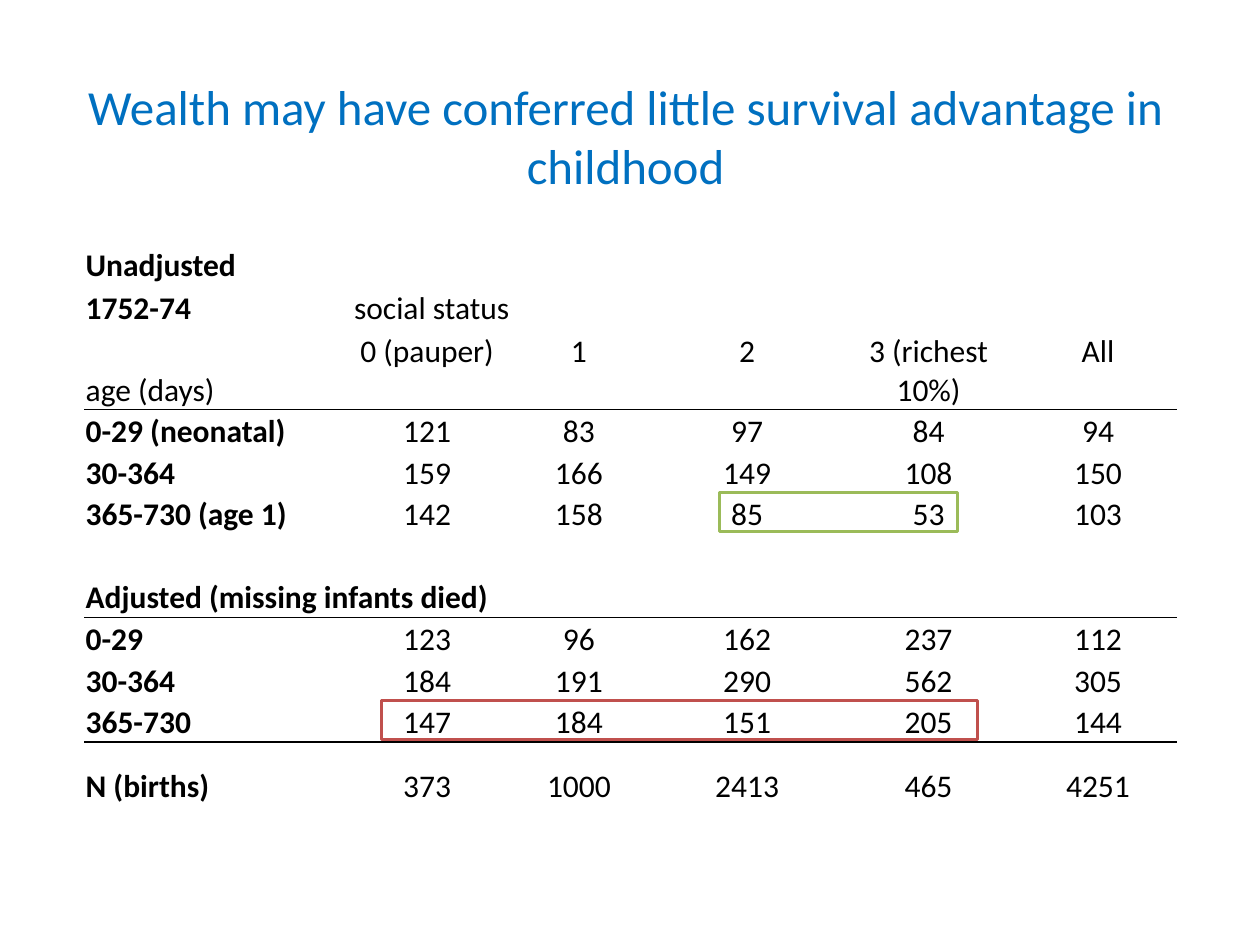
from dataclasses import dataclass

from lxml import etree
from pptx import Presentation
from pptx import util as u
from pptx.dml import color
from pptx.enum import shapes, text
from pptx.oxml import ns


@dataclass(frozen=True)
class Theme:
    font: str = "Calibri"
    title_size: int = 28
    body_size: int = 18
    title: str = "0070C0"
    ink: str = "000000"
    paper: str = "FFFFFF"
    unadjusted: str = "9BBB59"
    adjusted: str = "C0504D"
    outline: float = 2
    header_rule: float = 1
    section_rule: float = 0.75
    no_table_style: str = "{2D5ABB26-0587-4C30-8999-92F81FD0307C}"


GRID_COLUMNS, GRID_ROWS = 100, 75
LEFT, CENTER = text.PP_ALIGN.LEFT, text.PP_ALIGN.CENTER
TOP, MIDDLE, BOTTOM = (text.MSO_ANCHOR.TOP, text.MSO_ANCHOR.MIDDLE,
                       text.MSO_ANCHOR.BOTTOM)


class SlideBuilder:
    def __init__(self, presentation, theme):
        self.theme = theme
        self.slide = presentation.slides.add_slide(presentation.slide_layouts[6])
        self.column = presentation.slide_width / GRID_COLUMNS
        self.row = presentation.slide_height / GRID_ROWS

    def place(self, left, top, width, height):
        return (round(left * self.column), round(top * self.row),
                round(width * self.column), round(height * self.row))

    def add_words(self, paragraph, words, size, ink, bold=False, align=LEFT):
        paragraph.alignment = align
        run = paragraph.add_run()
        run.text = words
        run.font.name = self.theme.font
        run.font.size = u.Pt(size)
        run.font.bold = bold
        run.font.color.rgb = color.RGBColor.from_string(ink)

    def title(self, words, *area):
        shape = self.slide.shapes.add_textbox(*self.place(*area))
        frame = shape.text_frame
        frame.word_wrap = True
        frame.vertical_anchor = MIDDLE
        self.add_words(frame.paragraphs[0], words, self.theme.title_size,
                       self.theme.title, align=CENTER)

    def highlight(self, line_color, *area):
        shape = self.slide.shapes.add_shape(
            shapes.MSO_SHAPE.RECTANGLE, *self.place(*area))
        shape.shadow.inherit = False
        shape.fill.solid()
        shape.fill.fore_color.rgb = color.RGBColor.from_string(self.theme.paper)
        shape.line.color.rgb = color.RGBColor.from_string(line_color)
        shape.line.width = u.Pt(self.theme.outline)

    def table(self, left, top, widths, heights):
        frame = self.slide.shapes.add_table(
            len(heights), len(widths),
            *self.place(left, top, sum(widths), sum(heights)))
        table = frame.table
        table.first_row = table.horz_banding = False
        style = table._tbl.tblPr.find(ns.qn("a:tableStyleId"))
        style.text = self.theme.no_table_style
        for column, width in zip(table.columns, widths):
            column.width = round(width * self.column)
        for row, height in zip(table.rows, heights):
            row.height = round(height * self.row)
        for cell in table.iter_cells():
            cell.fill.background()
            cell.margin_left = cell.margin_right = cell.margin_top = u.Inches(0.01)
            cell.margin_bottom = 0
            cell.vertical_anchor = BOTTOM
            cell.text_frame.paragraphs[0].font.size = u.Pt(self.theme.body_size)
        return table

    def cell(self, cell, words, bold=False, align=LEFT):
        self.add_words(cell.text_frame.paragraphs[0], words,
                       self.theme.body_size, self.theme.ink, bold, align)

    def rule_below(self, row, width):
        for cell in row.cells:
            border = etree.Element(ns.qn("a:lnB"), w=str(u.Pt(width)))
            fill = etree.SubElement(border, ns.qn("a:solidFill"))
            etree.SubElement(fill, ns.qn("a:srgbClr"), val=self.theme.ink)
            cell._tc.get_or_add_tcPr().insert(0, border)


WIDTHS = [21.3, 11.8, 12.3, 14.4, 14.4, 12.5]
HEIGHTS = [7.9, 3.4, 6.5] + [3.3] * 8 + [5.1]
HEADER, SECTION, LAST_AGE = 2, 7, 10
ROWS = [
    ["Unadjusted"],
    ["1752-74", "social status"],
    ["age (days)", "0 (pauper)", "1", "2", "3 (richest 10%)", "All"],
    ["0-29 (neonatal)", "121", "83", "97", "84", "94"],
    ["30-364", "159", "166", "149", "108", "150"],
    ["365-730 (age 1)", "142", "158", "85", "53", "103"],
    [],
    ["Adjusted (missing infants died)"],
    ["0-29", "123", "96", "162", "237", "112"],
    ["30-364", "184", "191", "290", "562", "305"],
    ["365-730", "147", "184", "151", "205", "144"],
    ["N (births)", "373", "1000", "2413", "465", "4251"],
]
MERGES = [((0, 0), (0, 1)), ((1, 1), (1, 2)), ((SECTION, 0), (SECTION, 5))]


def main():
    theme = Theme()
    presentation = Presentation()
    presentation.slide_width = u.Inches(10)
    presentation.slide_height = u.Inches(7.5)
    builder = SlideBuilder(presentation, theme)

    builder.highlight(theme.unadjusted, 57.1, 39.1, 18.9, 3.1)
    builder.highlight(theme.adjusted, 30.3, 55.6, 47.3, 3.1)

    table = builder.table(6.7, 14.7, WIDTHS, HEIGHTS)
    for start, end in MERGES:
        table.cell(*start).merge(table.cell(*end))
    for row, entries in enumerate(ROWS):
        for column, words in enumerate(entries):
            bold = column == 0 and row != HEADER
            align = CENTER if column and row >= HEADER else LEFT
            builder.cell(table.cell(row, column), words, bold, align)
    for column in range(1, len(WIDTHS)):
        heading = table.cell(HEADER, column)
        heading.vertical_anchor = TOP
        heading.margin_top = u.Inches(0.04)
    builder.rule_below(table.rows[HEADER], theme.header_rule)
    for row in (SECTION, LAST_AGE):
        builder.rule_below(table.rows[row], theme.section_rule)

    builder.title("Wealth may have conferred little survival advantage in childhood",
                  4.3, 4.5, 90.7, 12.5)
    presentation.save("out.pptx")


if __name__ == "__main__":
    main()
